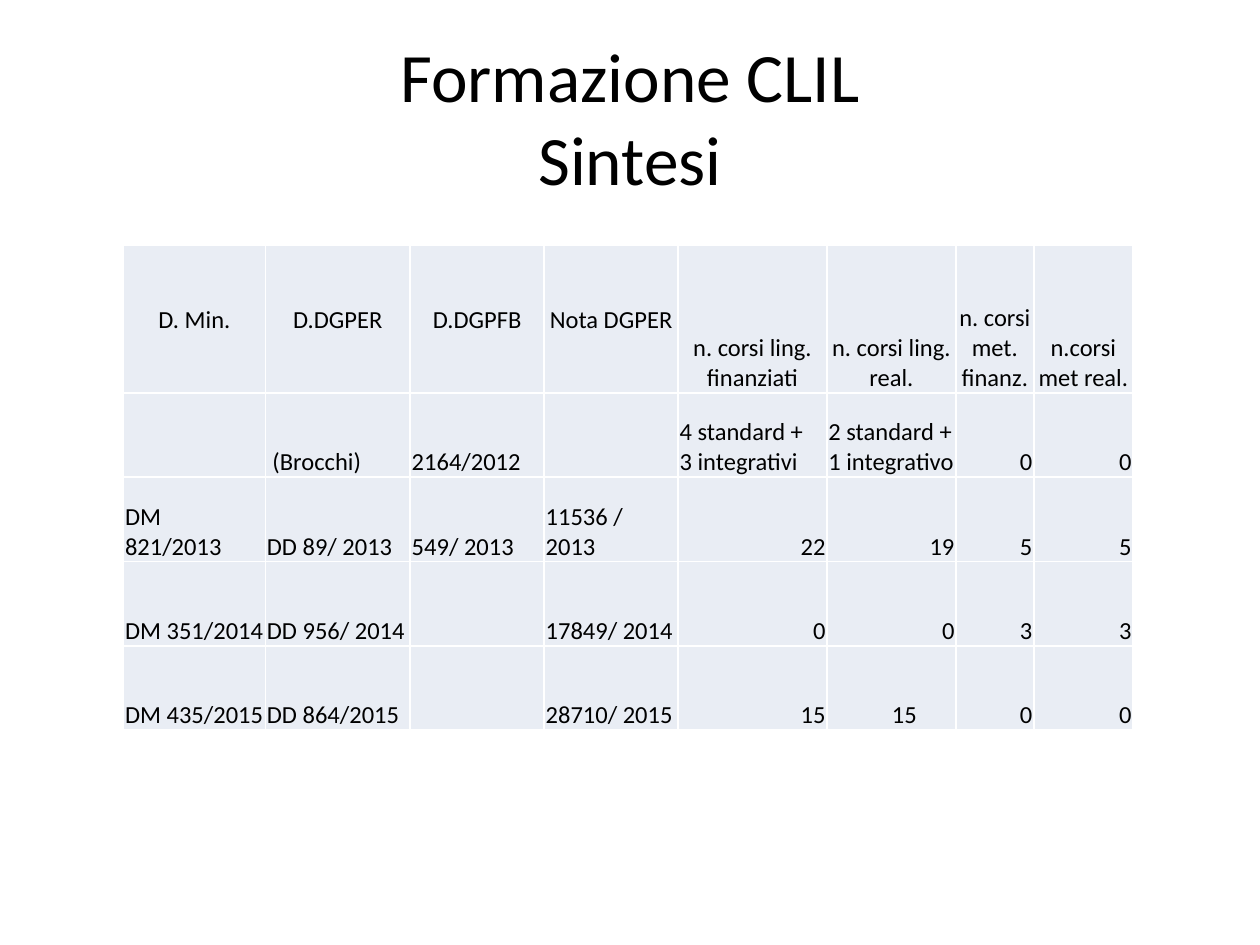
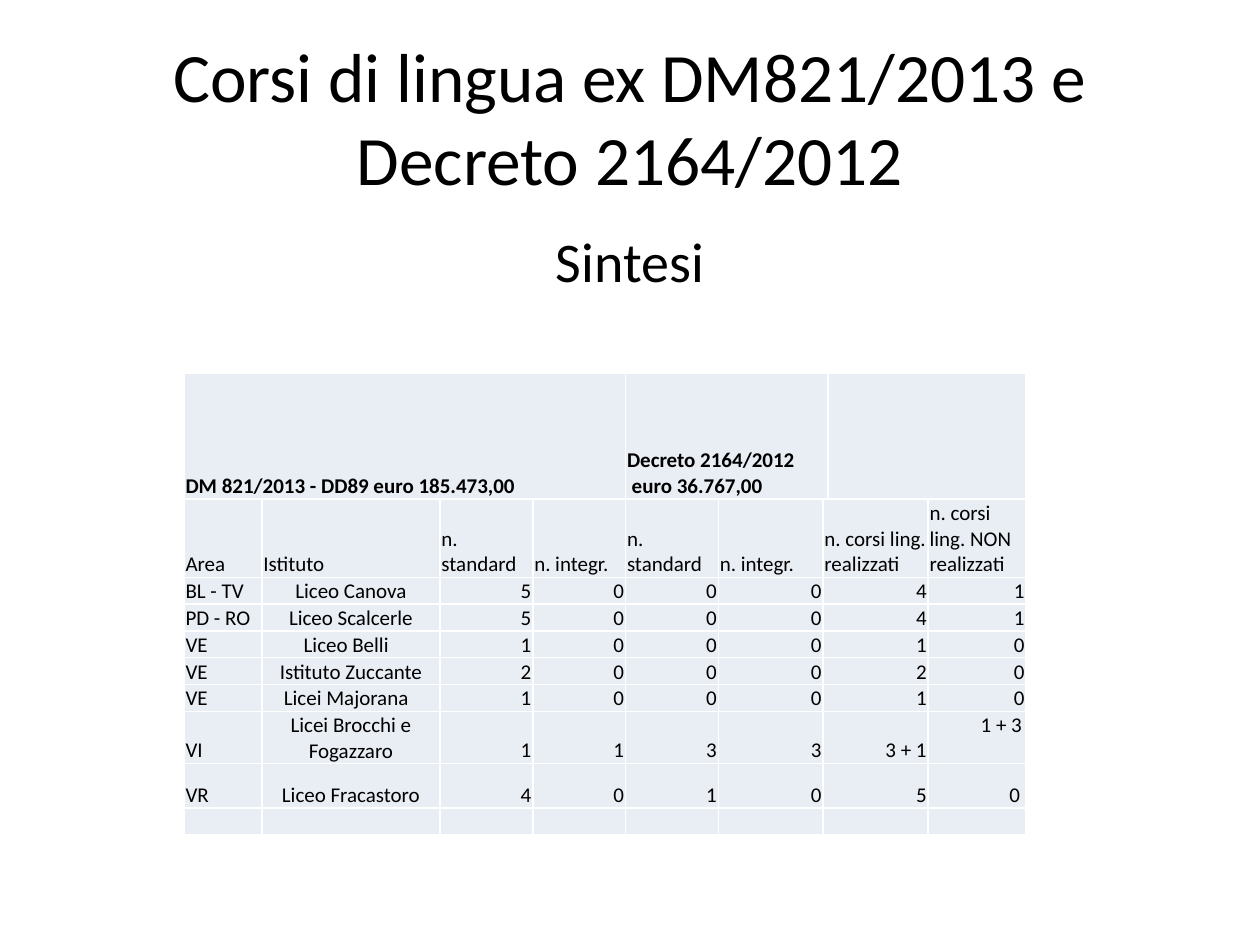
from pptx import Presentation
from pptx.dml.color import RGBColor
from pptx.enum.text import MSO_ANCHOR as Anchor, PP_ALIGN as Align
from pptx.oxml import parse_xml
from pptx.oxml.ns import nsdecls
from pptx.util import Cm, Pt

FONT, INK, PALE, LINE = "Calibri", "000000", "E9EDF4", "FFFFFF"
SIDES = {"l": Align.LEFT, "c": Align.CENTER, "r": Align.RIGHT}


def hue(code):
    return RGBColor.from_string(code)


def write(frame, text, size, side, bold=False):
    frame.word_wrap = True
    frame.text = text
    for par in frame.paragraphs:
        par.alignment = SIDES[side]
        style = {"name": FONT, "size": Pt(size), "bold": bold}
        for run in par.runs:
            for key, value in style.items():
                setattr(run.font, key, value)
            run.font.color.rgb = hue(INK)
        if not par.runs:  # keeps empty rows low
            par._p.get_or_add_endParaRPr().set("sz", str(size * 100))


# Cells are divided by "|"; spans gives the columns each cell covers.
# odd maps (row, column) to a side and further cell values.
pages = [
    {
        "title": "Formazione CLIL\vSintesi",
        "sub": None,
        "place": (2.49, 4.94),
        "size": 14,
        "cols": [2.86, 2.92, 2.7, 2.7, 3, 2.6, 1.57, 2],
        "rows": [2.98] + [1.7] * 4,
        "head": "cccccccc",
        "body": "llllrrrr",
        "spans": [[1] * 8] * 5,
        "bold": False,
        "cells": [
            "D. Min.|D.DGPER|D.DGPFB|Nota DGPER|n. corsi ling. finanziati|"
            "n. corsi ling. real.|n. corsi met. finanz.|n.corsi met real.",
            "| (Brocchi)|2164/2012||4 standard +\n3 integrativi|"
            "2 standard + 1 integrativo|0|0",
            "DM\v821/2013|DD 89/ 2013|549/ 2013|11536 / 2013|22|19|5|5",
            "DM 351/2014|DD 956/ 2014||17849/ 2014|0|0|3|3",
            "DM 435/2015|DD 864/2015||28710/ 2015|15|15|0|0",
        ],
        "odd": {
            **{(0, c): ("c", {"vertical_anchor": Anchor.MIDDLE}) for c in range(4)},
            (1, 4): ("l", {}),
            (1, 5): ("l", {}),
            (4, 5): ("c", {"margin_left": Cm(0.55)}),
        },
    },
    {
        "title": "Corsi di lingua ex DM821/2013 e Decreto 2164/2012",
        "sub": "Sintesi",
        "place": (3.71, 7.53),
        "size": 12,
        "cols": [1.57, 3.59, 1.87, 1.87, 1.87, 2.11, 0.1, 2.02, 1.97],
        "rows": [2.53, 1.58] + [0.54] * 5 + [1.05, 0.9, 0.53],
        "head": "llllllll",
        "body": "lcrrrrrr",
        "spans": [[4, 3, 2]] + [[1] * 6 + [2, 1]] * 9,
        "bold": True,
        "cells": [
            "DM 821/2013 - DD89 euro 185.473,00|"
            "Decreto 2164/2012\n euro 36.767,00|",
            "Area|Istituto|n. standard|n. integr.|n. standard|n. integr.|"
            "n. corsi ling. realizzati|n. corsi ling. NON realizzati",
            "BL - TV|Liceo Canova|5|0|0|0|4|1",
            "PD - RO|Liceo Scalcerle|5|0|0|0|4|1",
            "VE|Liceo Belli|1|0|0|0|1|0",
            "VE|Istituto Zuccante|2|0|0|0|2|0",
            "VE|Licei Majorana|1|0|0|0|1|0",
            "VI|Licei Brocchi e Fogazzaro|1|1|3|3|3 + 1|1 + 3",
            "VR|Liceo Fracastoro|4|0|1|0|5|0",
            "|||||||",
        ],
        "odd": {
            **{(1, c): ("l", {}) for c in range(8)},
            (4, 1): ("c", {"margin_right": Cm(0.22)}),
            (6, 1): ("c", {"margin_right": Cm(0.22)}),
            (7, 7): ("r", {"vertical_anchor": Anchor.TOP, "margin_right": Cm(0.08)}),
            (8, 7): ("r", {"margin_right": Cm(0.12)}),
        },
    },
]

deck = Presentation()
deck.slide_width, deck.slide_height = Cm(25.4), Cm(19.05)

for page in pages:
    slide = deck.slides.add_slide(deck.slide_layouts[6])

    # Title and subtitle
    box = slide.shapes.add_textbox(Cm(1.27), Cm(0.76), Cm(22.86), Cm(3.18))
    box.text_frame.vertical_anchor = Anchor.MIDDLE
    write(box.text_frame, page["title"], 39.6, "c")
    if page["sub"]:
        box = slide.shapes.add_textbox(Cm(1.27), Cm(4.45), Cm(22.86), Cm(12.57))
        write(box.text_frame, page["sub"], 32, "c")

    # Table grid
    cols, rows = page["cols"], page["rows"]
    x, y = page["place"]
    grid = slide.shapes.add_table(len(rows), len(cols), Cm(x), Cm(y),
                                  Cm(sum(cols)), Cm(sum(rows))).table
    grid.first_row = grid.horz_banding = False
    for col, width in zip(grid.columns, cols):
        col.width = Cm(width)
    for row, height in zip(grid.rows, rows):
        row.height = Cm(height)

    # Fill and white rules
    for cell in grid.iter_cells():
        props = cell._tc.get_or_add_tcPr()
        for edge in "LRTB":
            props.append(parse_xml(
                f'<a:ln{edge} {nsdecls("a")} w="12700"><a:solidFill>'
                f'<a:srgbClr val="{LINE}"/></a:solidFill></a:ln{edge}>'))
        cell.fill.solid()
        cell.fill.fore_color.rgb = hue(PALE)
        write(cell.text_frame, "", page["size"], "l")

    # Cell text
    for r, line in enumerate(page["cells"]):
        start = 0
        for c, (text, span) in enumerate(zip(line.split("|"), page["spans"][r])):
            cell = grid.cell(r, start)
            if span > 1:
                cell.merge(grid.cell(r, start + span - 1))
            start += span
            side = page["body" if r else "head"][c]
            side, extra = page["odd"].get((r, c), (side, {}))
            look = {"margin_left": Cm(0.03), "margin_right": Cm(0.03),
                    "margin_top": Cm(0.03), "margin_bottom": 0,
                    "vertical_anchor": Anchor.BOTTOM, **extra}
            for key, value in look.items():
                setattr(cell, key, value)
            write(cell.text_frame, text, page["size"], side, page["bold"] and r == 0)

deck.save("out.pptx")
